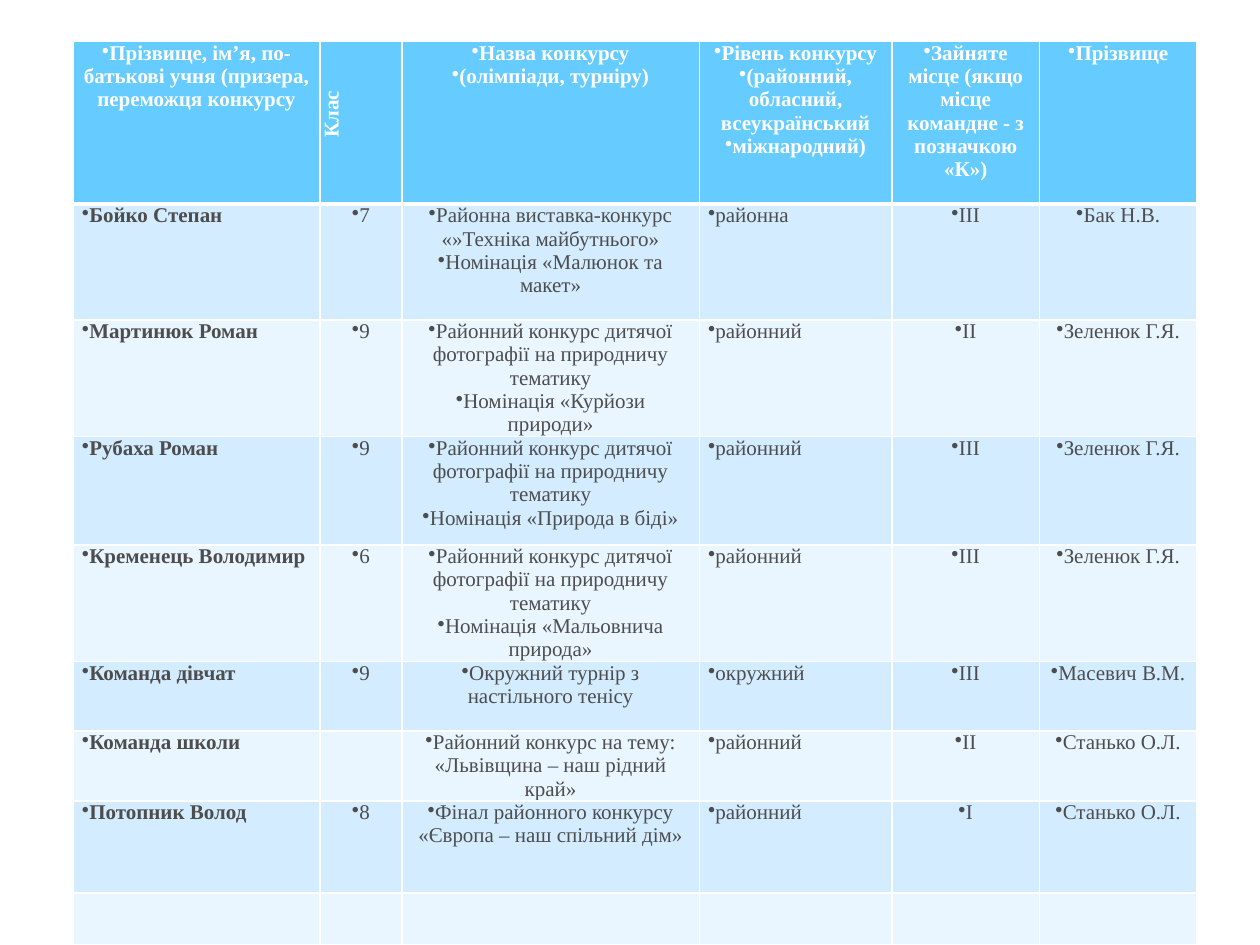
import pptx
import pptx.dml.color
import pptx.enum.text
import pptx.oxml.ns
import pptx.util
from lxml import etree
from pptx.dml.color import RGBColor
from pptx.util import Inches

WHITE = RGBColor(0xFF, 0xFF, 0xFF)
HEADER_BLUE = RGBColor(0x66, 0xCC, 0xFF)
BAND_DARK = RGBColor(0xD3, 0xEC, 0xFF)
BAND_LIGHT = RGBColor(0xEA, 0xF6, 0xFF)
TEXT_GREY = RGBColor(0x4D, 0x4D, 0x4D)

FONT_NAME = "Times New Roman"
COLUMN_WIDTHS = [1.96, 0.65, 2.36, 1.53, 1.17, 1.25]
ROW_HEIGHTS = [1.29, 0.92, 0.72, 0.86, 0.9, 0.55, 0.54, 0.73, 0.41]
NAME_COLUMN, CLASS_COLUMN, LEVEL_COLUMN = 0, 1, 3

PHOTO_CONTEST = "Районний конкурс дитячої фотографії на природничу тематику"
HEADER = [
    "Прізвище, ім’я, по-батькові учня (призера, переможця конкурсу",
    "Клас",
    "Назва конкурсу\n(олімпіади, турніру)",
    "Рівень конкурсу\n(районний, обласний, всеукраїнський\nміжнародний)",
    "Зайняте місце (якщо місце командне - з позначкою «К»)",
    "Прізвище",
]
RESULTS = [
    ["Бойко Степан", "7",
     "Районна виставка-конкурс «»Техніка майбутнього»\nНомінація «Малюнок та макет»",
     "районна", "ІІІ", "Бак Н.В."],
    ["Мартинюк Роман", "9", PHOTO_CONTEST + "\nНомінація «Курйози природи»",
     "районний", "ІІ", "Зеленюк Г.Я."],
    ["Рубаха Роман", "9", PHOTO_CONTEST + "\nНомінація «Природа в біді»",
     "районний", "ІІІ", "Зеленюк Г.Я."],
    ["Кременець Володимир", "6", PHOTO_CONTEST + "\nНомінація «Мальовнича природа»",
     "районний", "ІІІ", "Зеленюк Г.Я."],
    ["Команда дівчат", "9", "Окружний турнір з настільного тенісу",
     "окружний", "ІІІ", "Масевич В.М."],
    ["Команда школи", "", "Районний конкурс на тему: «Львівщина – наш рідний край»",
     "районний", "ІІ", "Станько О.Л."],
    ["Потопник Волод", "8", "Фінал районного конкурсу «Європа – наш спільний дім»",
     "районний", "І", "Станько О.Л."],
    [""] * len(HEADER),
]


def add_element(parent, tag, **attributes):
    return etree.SubElement(parent, pptx.oxml.ns.qn(tag), attributes)


def set_borders(cell, bottom_width):
    """Draw white cell borders; the elements must precede the cell fill."""
    properties = cell._tc.get_or_add_tcPr()
    widths = {"a:lnL": 1, "a:lnR": 1, "a:lnT": 1, "a:lnB": bottom_width}
    for tag, width in widths.items():
        line = add_element(properties, tag, w=str(pptx.util.Pt(width)))
        fill = add_element(line, "a:solidFill")
        add_element(fill, "a:srgbClr", val=str(WHITE))


def write_cell(cell, text, alignment, color, bold):
    cell.margin_left = cell.margin_right = Inches(0.07)
    cell.margin_top = cell.margin_bottom = 0
    cell.text = text
    for paragraph in cell.text_frame.paragraphs:
        paragraph.alignment = alignment
        properties = paragraph._p.get_or_add_pPr()
        properties.set("marL", "0")
        properties.set("indent", "0")
        add_element(properties, "a:buChar", char="•")
        paragraph.font.name = FONT_NAME
        paragraph.font.size = pptx.util.Pt(12)
        paragraph.font.bold = bold
        paragraph.font.color.rgb = color


def add_results_table(slide, left, top, width, height):
    rows = [HEADER] + RESULTS
    frame = slide.shapes.add_table(len(rows), len(HEADER), left, top, width, height)
    table = frame.table
    table.horz_banding = False
    for column, column_width in zip(table.columns, COLUMN_WIDTHS):
        column.width = Inches(column_width)
    for row, row_height in zip(table.rows, ROW_HEIGHTS):
        row.height = Inches(row_height)

    for row_index, texts in enumerate(rows):
        is_header = row_index == 0
        band = BAND_DARK if row_index % 2 else BAND_LIGHT
        for column_index, text in enumerate(texts):
            cell = table.cell(row_index, column_index)
            set_borders(cell, 3 if is_header else 1)
            cell.fill.solid()
            cell.fill.fore_color.rgb = HEADER_BLUE if is_header else band
            if not text:
                continue
            left_aligned = not is_header and column_index in (NAME_COLUMN, LEVEL_COLUMN)
            align = pptx.enum.text.PP_ALIGN
            write_cell(
                cell, text,
                align.LEFT if left_aligned else align.CENTER,
                WHITE if is_header else TEXT_GREY,
                is_header or column_index == NAME_COLUMN,
            )

    class_header = table.cell(0, CLASS_COLUMN)
    class_header._tc.get_or_add_tcPr().set("vert", "vert270")
    class_paragraph = class_header.text_frame.paragraphs[0]
    class_paragraph._p.get_or_add_pPr().set("marL", str(Inches(0.08)))


def main():
    presentation = pptx.Presentation()
    presentation.slide_width = Inches(10)
    presentation.slide_height = Inches(7.5)
    slide = presentation.slides.add_slide(presentation.slide_layouts[6])
    add_results_table(slide, Inches(0.58), Inches(0.33), Inches(8.92), Inches(7.16))
    presentation.save("out.pptx")


if __name__ == "__main__":
    main()
